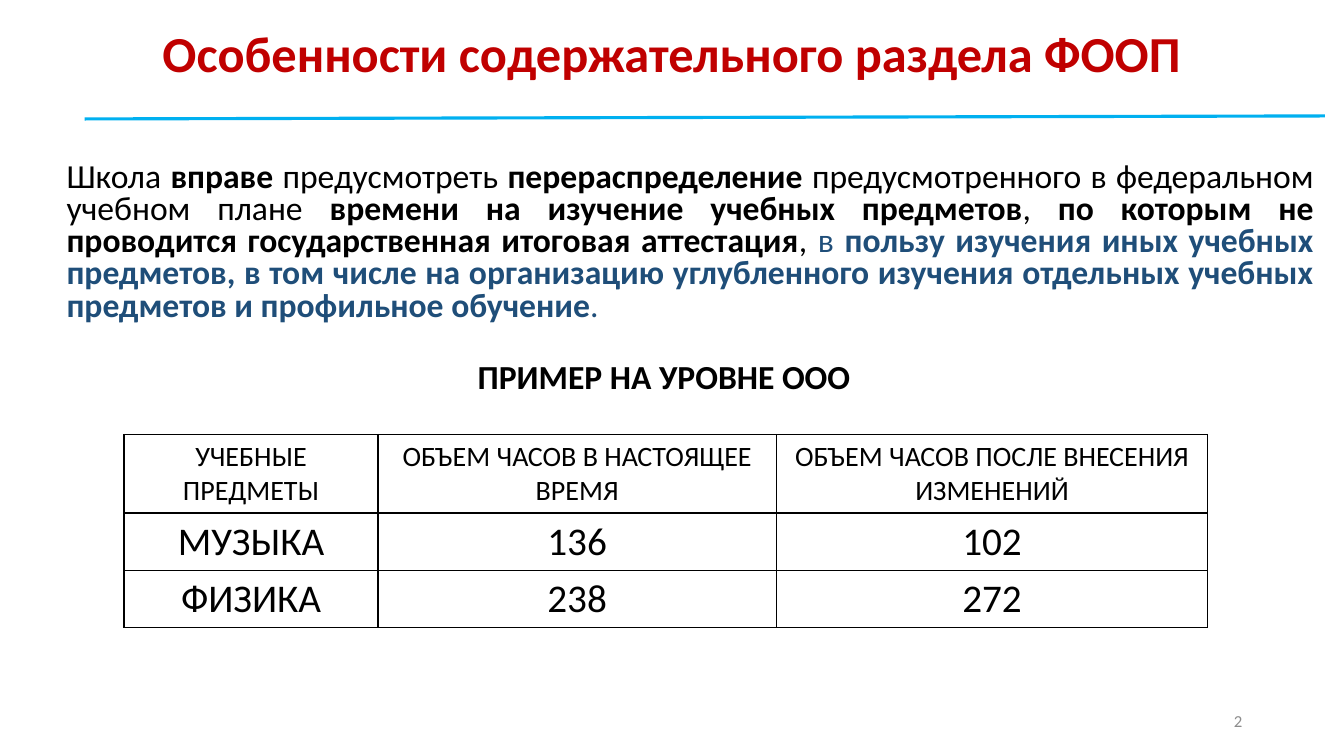
import lxml.etree
import pptx
import pptx.dml.color
import pptx.enum.shapes
import pptx.enum.text
import pptx.oxml.ns
import pptx.util

Inches = pptx.util.Inches
Pt = pptx.util.Pt
RGBColor = pptx.dml.color.RGBColor
ALIGN = pptx.enum.text.PP_ALIGN
ANCHOR = pptx.enum.text.MSO_ANCHOR
qn = pptx.oxml.ns.qn

FONT = "Calibri"
BLACK = RGBColor(0x00, 0x00, 0x00)
RED = RGBColor(0xC0, 0x00, 0x00)
SKY = RGBColor(0x00, 0xB0, 0xF0)
NAVY = RGBColor(0x1F, 0x4E, 0x79)
GRAY = RGBColor(0x8C, 0x8C, 0x8C)

# Text, bold, colour
RULE_PARTS = [
    ("Школа ", False, BLACK),
    ("вправе", True, BLACK),
    (" предусмотреть ", False, BLACK),
    ("перераспределение", True, BLACK),
    (" предусмотренного в федеральном учебном плане ", False, BLACK),
    ("времени на изучение учебных предметов", True, BLACK),
    (", ", False, BLACK),
    ("по которым не проводится государственная итоговая аттестация", True, BLACK),
    (", ", False, BLACK),
    ("в ", False, NAVY),
    ("пользу изучения иных учебных предметов, в том числе на организацию "
     "углубленного изучения отдельных учебных предметов и профильное обучение",
     True, NAVY),
    (".", False, NAVY),
]
HOURS = [
    ("УЧЕБНЫЕ ПРЕДМЕТЫ", "ОБЪЕМ ЧАСОВ В НАСТОЯЩЕЕ ВРЕМЯ",
     "ОБЪЕМ ЧАСОВ ПОСЛЕ ВНЕСЕНИЯ ИЗМЕНЕНИЙ"),
    ("МУЗЫКА", "136", "102"),
    ("ФИЗИКА", "238", "272"),
]
COLUMN_WIDTHS = (2.52, 3.95, 4.28)
ROW_HEIGHTS = (0.78, 0.56, 0.56)


def style_run(run, size, color=BLACK, bold=False):
    run.font.name = FONT
    run.font.size = Pt(size)
    run.font.bold = bold
    run.font.color.rgb = color


def place(region, left, top, width, height):
    region.left, region.top = Inches(left), Inches(top)
    region.width, region.height = Inches(width), Inches(height)


def write_line(frame, text, size, align, color=BLACK, bold=False):
    frame.text = text
    line = frame.paragraphs[0]
    line.alignment = align
    style_run(line.runs[0], size, color, bold)
    return line


def add_heading(slide, left, top, width, height):
    title = slide.shapes.title
    place(title, left, top, width, height)
    frame = title.text_frame
    frame.auto_size = pptx.enum.text.MSO_AUTO_SIZE.NONE
    frame.vertical_anchor = ANCHOR.TOP
    line = write_line(frame, "Особенности содержательного раздела ФООП ",
                      36, ALIGN.CENTER, RED, True)
    line.line_spacing = 0.7

    # Rule under the title
    underline = slide.shapes.add_connector(
        pptx.enum.shapes.MSO_CONNECTOR.STRAIGHT,
        Inches(left + 0.14), Inches(top + 0.85),
        Inches(left + 12.44), Inches(top + 0.82))
    underline.line.color.rgb = SKY
    underline.line.width = Pt(2.25)
    lxml.etree.SubElement(underline._element.spPr, qn("a:effectLst"))


def add_rule_text(slide, left, top, width, height):
    body = slide.placeholders[1]
    place(body, left, top, width, height)
    body.text_frame.auto_size = pptx.enum.text.MSO_AUTO_SIZE.NONE
    statement = body.text_frame.paragraphs[0]
    statement.alignment = ALIGN.JUSTIFY
    statement.line_spacing = 0.8
    statement.space_before = Pt(0)
    # No bullet, no hanging indent
    properties = statement._p.get_or_add_pPr()
    properties.set("marL", "0")
    properties.set("indent", "0")
    lxml.etree.SubElement(properties, qn("a:buNone"))
    for text, bold, color in RULE_PARTS:
        run = statement.add_run()
        run.text = text
        style_run(run, 24, color, bold)


def add_caption(slide, left, top, width, height, text, size, align,
                color=BLACK, bold=False, anchor=ANCHOR.TOP):
    caption = slide.shapes.add_textbox(
        Inches(left), Inches(top), Inches(width), Inches(height))
    caption.text_frame.word_wrap = True
    caption.text_frame.vertical_anchor = anchor
    write_line(caption.text_frame, text, size, align, color, bold)


def add_borders(cell):
    properties = cell._tc.get_or_add_tcPr()
    for index, side in enumerate(("a:lnL", "a:lnR", "a:lnT", "a:lnB")):
        border = lxml.etree.Element(qn(side), w=str(Pt(1)))
        fill = lxml.etree.SubElement(border, qn("a:solidFill"))
        lxml.etree.SubElement(fill, qn("a:srgbClr"), val=str(BLACK))
        properties.insert(index, border)


def add_hours_table(slide, left, top, width, height):
    hours = slide.shapes.add_table(
        len(HOURS), len(COLUMN_WIDTHS), Inches(left), Inches(top),
        Inches(width), Inches(height)).table
    for column, column_width in zip(hours.columns, COLUMN_WIDTHS):
        column.width = Inches(column_width)
    for row, row_height in zip(hours.rows, ROW_HEIGHTS):
        row.height = Inches(row_height)
    for r, values in enumerate(HOURS):
        for c, value in enumerate(values):
            cell = hours.cell(r, c)
            cell.fill.background()
            add_borders(cell)
            write_line(cell.text_frame, value, 20 if r == 0 else 28, ALIGN.CENTER)


def main():
    prs = pptx.Presentation()
    prs.slide_width, prs.slide_height = Inches(13.33), Inches(7.5)
    slide = prs.slides.add_slide(prs.slide_layouts[1])

    add_heading(slide, 0.7, 0.33, 12.04, 0.57)
    add_rule_text(slide, 0.56, 1.56, 12.57, 2.05)
    add_caption(slide, 4.64, 3.48, 3.93, 0.5, "ПРИМЕР НА УРОВНЕ ООО",
                24, ALIGN.LEFT, bold=True)
    add_hours_table(slide, 1.23, 4.31, 10.76, 1.9)
    # Slide number
    add_caption(slide, 9.42, 6.95, 3, 0.4, "2", 12, ALIGN.RIGHT, GRAY,
                anchor=ANCHOR.MIDDLE)
    prs.save("out.pptx")


if __name__ == "__main__":
    main()
